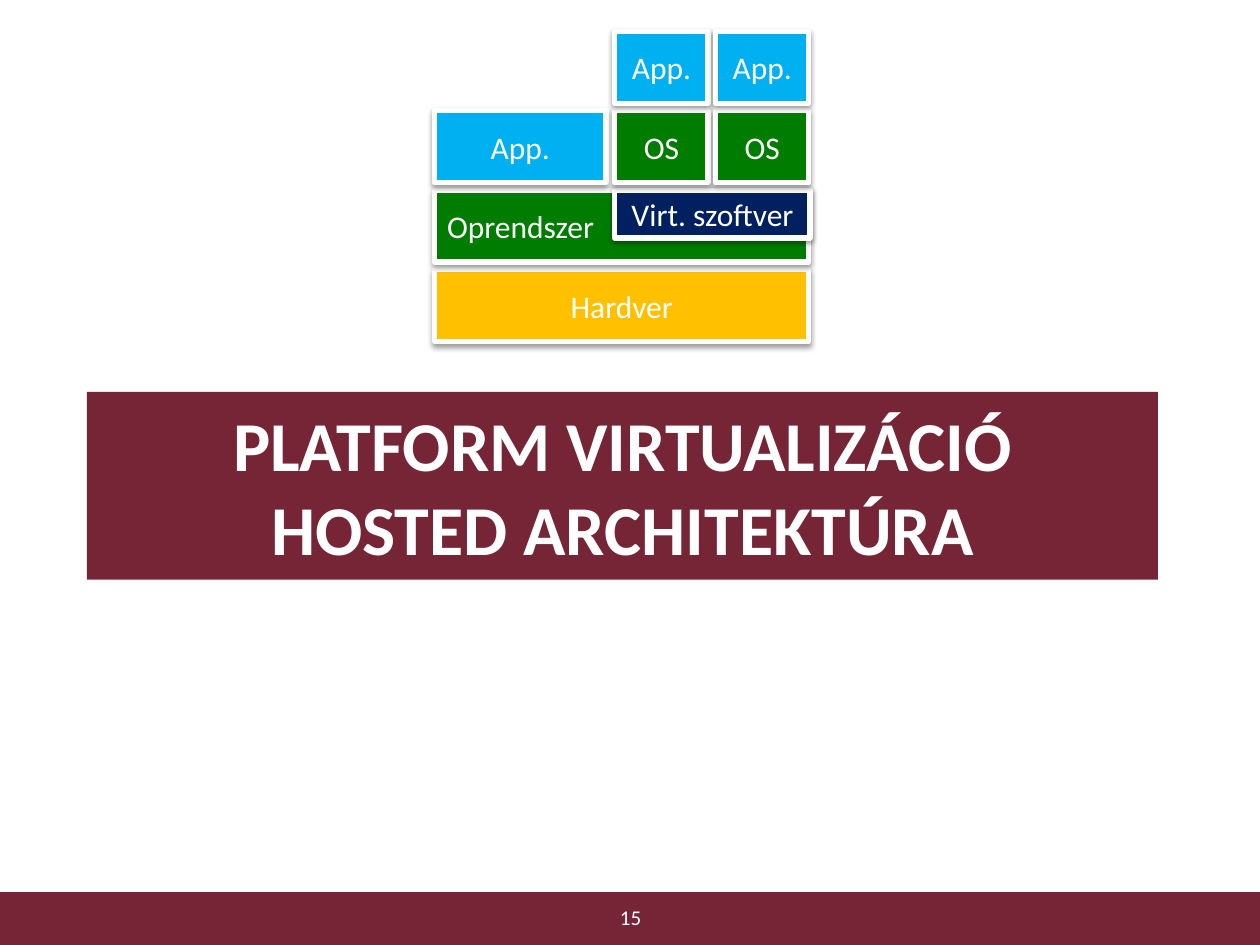
import lxml.etree
import pptx
import pptx.dml.color
import pptx.enum.shapes
import pptx.enum.text
import pptx.oxml.ns
import pptx.util

Inches = pptx.util.Inches
Pt = pptx.util.Pt
ALIGN = pptx.enum.text.PP_ALIGN

WHITE, MAROON = "FFFFFF", "762536"
GOLD, GREEN, NAVY, SKY = "FFC000", "007D00", "002060", "00B0F0"

TITLE = "PLATFORM VIRTUALIZÁCIÓ\vHOSTED ARCHITEKTÚRA"
PAGE_NUMBER = "15"

STACK_LEFT, STACK_TOP = 3.45, 0.25
ROW_PITCH, LAYER_HEIGHT, SOFTWARE_HEIGHT = 0.63, 0.57, 0.38
COLUMNS = {
    "all": (0, 2.97),
    "host": (0, 1.36),
    "guests": (1.43, 1.55),
    "guest 1": (1.43, 0.74),
    "guest 2": (2.23, 0.74),
}
LAYERS = [
    ("Hardver", 3, "all", LAYER_HEIGHT, GOLD, ALIGN.CENTER),
    ("Oprendszer", 2, "all", LAYER_HEIGHT, GREEN, ALIGN.LEFT),
    ("Virt. szoftver", 2, "guests", SOFTWARE_HEIGHT, NAVY, ALIGN.CENTER),
    ("App.", 1, "host", LAYER_HEIGHT, SKY, ALIGN.CENTER),
    ("OS", 1, "guest 1", LAYER_HEIGHT, GREEN, ALIGN.CENTER),
    ("OS", 1, "guest 2", LAYER_HEIGHT, GREEN, ALIGN.CENTER),
    ("App.", 0, "guest 1", LAYER_HEIGHT, SKY, ALIGN.CENTER),
    ("App.", 0, "guest 2", LAYER_HEIGHT, SKY, ALIGN.CENTER),
]


def color(value):
    return pptx.dml.color.RGBColor.from_string(value)


def write(shape, text, size, alignment=ALIGN.CENTER, bold=False):
    frame = shape.text_frame
    frame.word_wrap = True
    frame.vertical_anchor = pptx.enum.text.MSO_ANCHOR.MIDDLE
    frame.text = text
    paragraph = frame.paragraphs[0]
    paragraph.alignment = alignment
    for run in paragraph.runs:
        font_format = {"name": "Calibri", "size": Pt(size), "bold": bold}
        for name, value in font_format.items():
            setattr(run.font, name, value)
        run.font.color.rgb = color(WHITE)


def add_rectangle(shapes, box, fill):
    shape = shapes.add_shape(
        pptx.enum.shapes.MSO_SHAPE.RECTANGLE, *map(Inches, box)
    )
    shape.shadow.inherit = False
    shape.fill.solid()
    shape.fill.fore_color.rgb = color(fill)
    shape.line.fill.background()
    return shape


def add_shadow(shape):
    qn = pptx.oxml.ns.qn
    effects = shape.element.spPr.find(qn("a:effectLst"))
    shadow = lxml.etree.SubElement(
        effects, qn("a:outerShdw"), blurRad=str(Pt(3.1)), dist=str(Pt(1.6)),
        dir="5400000", rotWithShape="0",
    )
    shade = lxml.etree.SubElement(shadow, qn("a:srgbClr"), val="000000")
    lxml.etree.SubElement(shade, qn("a:alpha"), val="38000")


def add_layer(shapes, text, row, column, height, fill, alignment):
    offset, width = COLUMNS[column]
    box = (STACK_LEFT + offset, STACK_TOP + row * ROW_PITCH, width, height)
    shape = add_rectangle(shapes, box, fill)
    shape.line.color.rgb = color(WHITE)
    shape.line.width = Pt(3)
    add_shadow(shape)
    write(shape, text, 18, alignment)


def main():
    presentation = pptx.Presentation()
    presentation.slide_width = Inches(10)
    presentation.slide_height = Inches(7.5)
    slide = presentation.slides.add_slide(presentation.slide_layouts[6])

    add_rectangle(slide.shapes, (0, 7.08, 10, 0.42), MAROON)
    title = add_rectangle(slide.shapes, (0.69, 3.11, 8.5, 1.49), MAROON)
    write(title, TITLE, 40, bold=True)
    page_box = map(Inches, (3.88, 7.08, 2.25, 0.4))
    write(slide.shapes.add_textbox(*page_box), PAGE_NUMBER, 12)

    stack = slide.shapes.add_group_shape()
    for layer in LAYERS:
        add_layer(stack.shapes, *layer)

    presentation.save("out.pptx")


if __name__ == "__main__":
    main()
